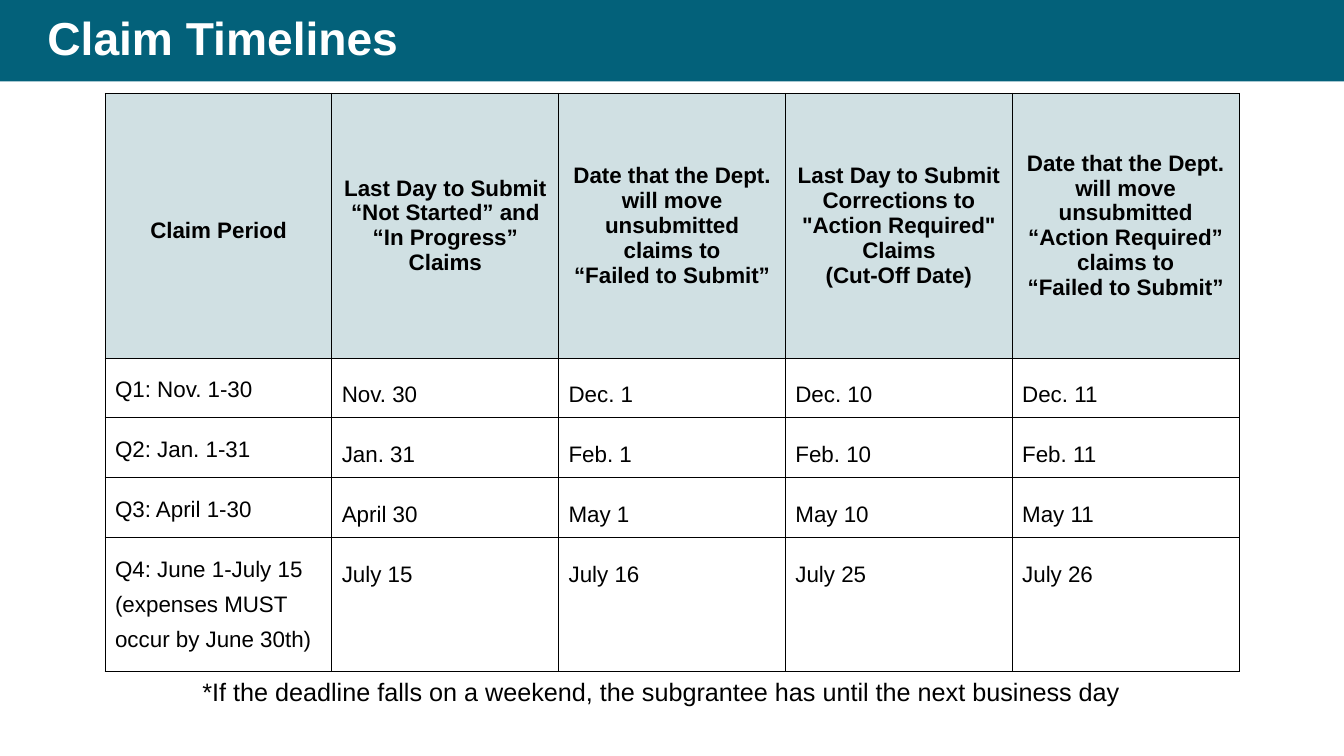
from lxml import etree
from pptx import Presentation
from pptx.dml.color import RGBColor
from pptx.enum.shapes import MSO_SHAPE
from pptx.enum.text import MSO_ANCHOR, MSO_AUTO_SIZE, PP_ALIGN
from pptx.oxml.ns import qn
from pptx.util import Cm, Pt

RECTANGLE = MSO_SHAPE.RECTANGLE
TOP, MIDDLE = MSO_ANCHOR.TOP, MSO_ANCHOR.MIDDLE
LEFT, CENTER = PP_ALIGN.LEFT, PP_ALIGN.CENTER
FIT_SHAPE, FIT_NONE = MSO_AUTO_SIZE.SHAPE_TO_FIT_TEXT, MSO_AUTO_SIZE.NONE

FONT = "Arial"
COLORS = {"banner": "03617A", "header": "D0E0E3", "text": "000000",
          "title": "FFFFFF", "border": "000000"}
SLIDE_WIDTH, SLIDE_HEIGHT = Cm(33.87), Cm(19.05)
BANNER_HEIGHT = Cm(2.05)
INSET = Cm(0.25)
COLUMN_WIDTH = Cm(5.715)
ROW_HEIGHTS = [6.67, 1.51, 1.51, 1.51, 3.38]

HEADERS = [
    "Claim Period",
    "Last Day to Submit “Not Started” and “In Progress” Claims",
    "Date that the Dept. will move unsubmitted claims to\v“Failed to Submit”",
    "Last Day to Submit Corrections to \"Action Required\" Claims\v(Cut-Off Date)",
    "Date that the Dept. will move unsubmitted “Action Required” claims to\v“Failed to Submit”",
]
CLAIMS = [
    ["Q1: Nov. 1-30", "Nov. 30", "Dec. 1", "Dec. 10", "Dec. 11"],
    ["Q2: Jan. 1-31", "Jan. 31", "Feb. 1", "Feb. 10", "Feb. 11"],
    ["Q3: April 1-30", "April 30", "May 1", "May 10", "May 11"],
    ["Q4: June 1-July 15 (expenses MUST occur by June 30th)",
     "July 15", "July 16", "July 25", "July 26"],
]


def color(name):
    return RGBColor.from_string(COLORS[name])


def write(frame, text, size, color_name="text", bold=False, align=LEFT, spacing=1.0):
    frame.text = text
    frame.word_wrap = True
    for para in frame.paragraphs:
        para.alignment = align
        para.line_spacing = spacing
        for span in para.runs:
            span.font.name = FONT
            span.font.size = Pt(size)
            span.font.bold = bold
            span.font.color.rgb = color(color_name)


def add_banner(page):
    banner = page.shapes.add_shape(RECTANGLE, 0, 0, SLIDE_WIDTH, BANNER_HEIGHT)
    banner.shadow.inherit = False
    banner.fill.solid()
    banner.fill.fore_color.rgb = color("banner")
    banner.line.fill.background()
    page.shapes._spTree.insert(2, banner._element)


def add_title(page, text):
    title = page.shapes.title
    title.left, title.top = Cm(0.94), Cm(0)
    title.width, title.height = Cm(31.29), BANNER_HEIGHT
    frame = title.text_frame
    write(frame, text, 33, "title", bold=True, spacing=0.9)
    frame.auto_size = FIT_NONE
    frame.vertical_anchor = MIDDLE


def add_borders(cell):
    properties = cell._tc.get_or_add_tcPr()
    for side in ("lnL", "lnR", "lnT", "lnB"):
        line = etree.SubElement(properties, qn(f"a:{side}"), w=str(Pt(0.75)))
        fill = etree.SubElement(line, qn("a:solidFill"))
        etree.SubElement(fill, qn("a:srgbClr"), val=COLORS["border"])


def format_cell(cell, text, is_header, is_period):
    cell.margin_left = cell.margin_right = INSET
    cell.margin_top = cell.margin_bottom = INSET
    cell.vertical_anchor = MIDDLE if is_header else TOP
    add_borders(cell)
    if is_header:
        cell.fill.solid()
        cell.fill.fore_color.rgb = color("header")
    else:
        cell.fill.background()
    spacing = 1.4 if is_period else 1.0 if is_header else 1.6
    write(cell.text_frame, text, 16, bold=is_header,
          align=CENTER if is_header else LEFT, spacing=spacing)


def add_timeline_table(page):
    rows = [HEADERS] + CLAIMS
    table = page.shapes.add_table(
        len(rows), len(HEADERS), Cm(2.65), Cm(2.35),
        COLUMN_WIDTH * len(HEADERS), Cm(sum(ROW_HEIGHTS))).table
    table.first_row = table.horz_banding = False
    for column in table.columns:
        column.width = COLUMN_WIDTH
    for row_index, (texts, height) in enumerate(zip(rows, ROW_HEIGHTS)):
        table.rows[row_index].height = Cm(height)
        for column_index, text in enumerate(texts):
            format_cell(table.cell(row_index, column_index), text,
                        row_index == 0, column_index == 0)


def add_footnote(page, text):
    box = page.shapes.add_textbox(Cm(4.85), Cm(16.79), Cm(24.66), Cm(1.27))
    frame = box.text_frame
    frame.margin_left = frame.margin_right = INSET
    frame.margin_top = frame.margin_bottom = INSET
    write(frame, text, 18)
    frame.auto_size = FIT_SHAPE


def main():
    deck = Presentation()
    deck.slide_width, deck.slide_height = SLIDE_WIDTH, SLIDE_HEIGHT
    page = deck.slides.add_slide(deck.slide_layouts.get_by_name("Title Only"))
    add_banner(page)
    add_title(page, "Claim Timelines")
    page.shapes.title.text_frame.paragraphs[0].alignment = LEFT
    add_timeline_table(page)
    add_footnote(page, "*If the deadline falls on a weekend, the subgrantee has "
                       "until the next business day")
    deck.save("out.pptx")


if __name__ == "__main__":
    main()
